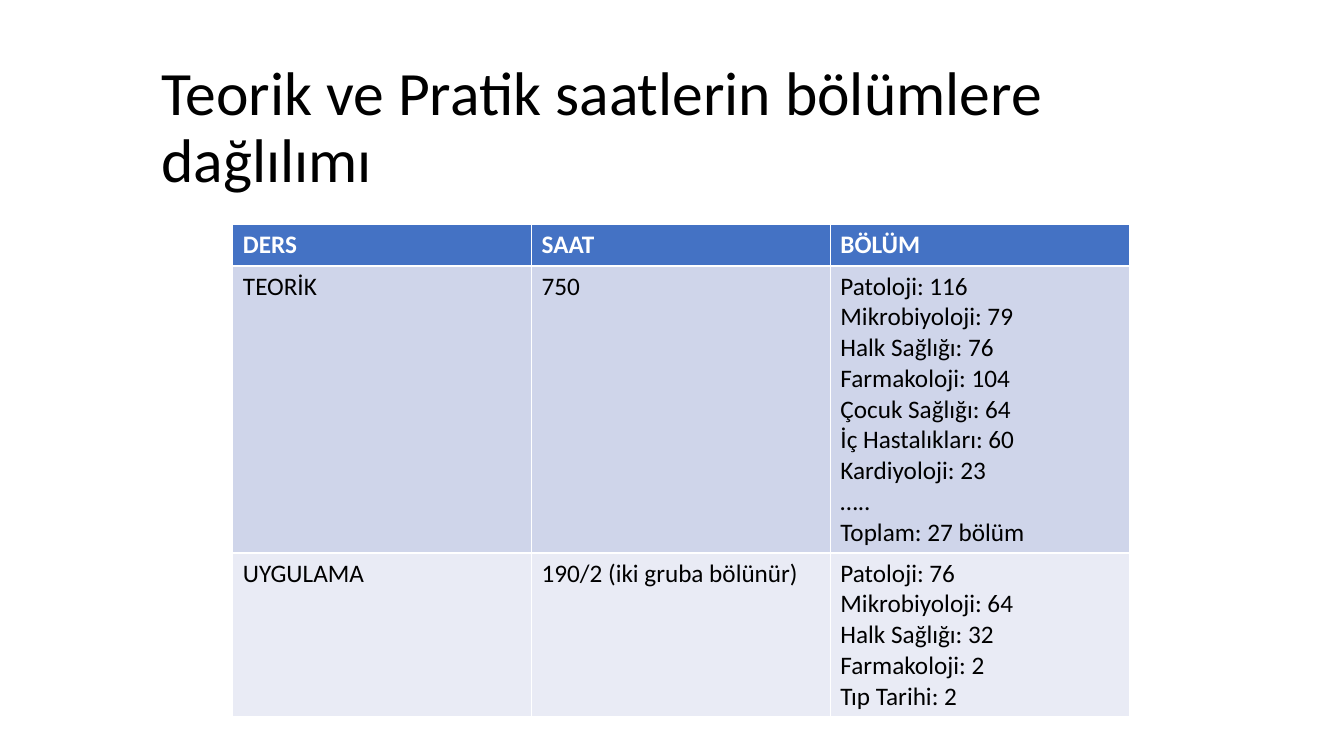
from dataclasses import dataclass

from pptx import Presentation
from pptx.dml.color import RGBColor
from pptx.enum.text import MSO_ANCHOR, MSO_AUTO_SIZE, PP_ALIGN
from pptx.util import Inches, Pt

MIDDLE = MSO_ANCHOR.MIDDLE
NO_FIT = MSO_AUTO_SIZE.NONE
LEFT = PP_ALIGN.LEFT
TITLE_ONLY = 5


@dataclass(frozen=True)
class Theme:
    font: str = "Calibri"
    title_size: int = 44
    body_size: int = 18
    dark: str = "000000"
    light: str = "FFFFFF"
    header: str = "4472C4"
    band: str = "CFD5EA"
    pale: str = "E9EBF5"


@dataclass(frozen=True)
class Row:
    cells: tuple[str, ...]
    height: float
    fill: str
    color: str
    bold: bool = False


THEME = Theme()
TITLE = "Teorik ve Pratik saatlerin bölümlere dağlılımı"
THEORY = """Patoloji: 116
Mikrobiyoloji: 79
Halk Sağlığı: 76
Farmakoloji: 104
Çocuk Sağlığı: 64
İç Hastalıkları: 60
Kardiyoloji: 23
…..
Toplam: 27 bölüm"""
PRACTICE = """Patoloji: 76
Mikrobiyoloji: 64
Halk Sağlığı: 32
Farmakoloji: 2
Tıp Tarihi: 2"""
ROWS = (
    Row(("DERS", "SAAT", "BÖLÜM"), 0.41, THEME.header, THEME.light, True),
    Row(("TEORİK", "750", THEORY), 2.84, THEME.band, THEME.dark),
    Row(("UYGULAMA", "190/2 (iki gruba bölünür)", PRACTICE), 1.62,
        THEME.pale, THEME.dark),
)


def style(frame, size: int, color: str, bold: bool = False) -> None:
    for para in frame.paragraphs:
        para.alignment = LEFT
        font = para.font
        font.name = THEME.font
        font.size = Pt(size)
        font.bold = bold
        font.color.rgb = RGBColor.from_string(color)


def add_title(slide) -> None:
    title = slide.shapes.title
    title.left, title.top = Inches(1.5), Inches(0.47)
    title.width, title.height = Inches(10.5), Inches(1.62)
    frame = title.text_frame
    frame.text = TITLE
    frame.word_wrap = True
    frame.auto_size = NO_FIT
    frame.vertical_anchor = MIDDLE
    frame.paragraphs[0].line_spacing = 0.9
    style(frame, THEME.title_size, THEME.dark)


def add_hours(slide, rows: tuple[Row, ...]) -> None:
    """Add the table of hours; its built-in style draws the white rules."""
    height = sum(row.height for row in rows)
    table = slide.shapes.add_table(
        len(rows), len(rows[0].cells),
        Inches(2.31), Inches(2.23), Inches(8.89), Inches(height)).table
    for line, row in zip(table.rows, rows):
        line.height = Inches(row.height)
        for cell, text in zip(line.cells, row.cells):
            cell.text = text
            cell.fill.solid()
            cell.fill.fore_color.rgb = RGBColor.from_string(row.fill)
            style(cell.text_frame, THEME.body_size, row.color, row.bold)


def main() -> None:
    deck = Presentation()
    deck.slide_width, deck.slide_height = Inches(13.33), Inches(7.5)
    slide = deck.slides.add_slide(deck.slide_layouts[TITLE_ONLY])
    add_title(slide)
    add_hours(slide, ROWS)
    deck.save("out.pptx")


if __name__ == "__main__":
    main()
